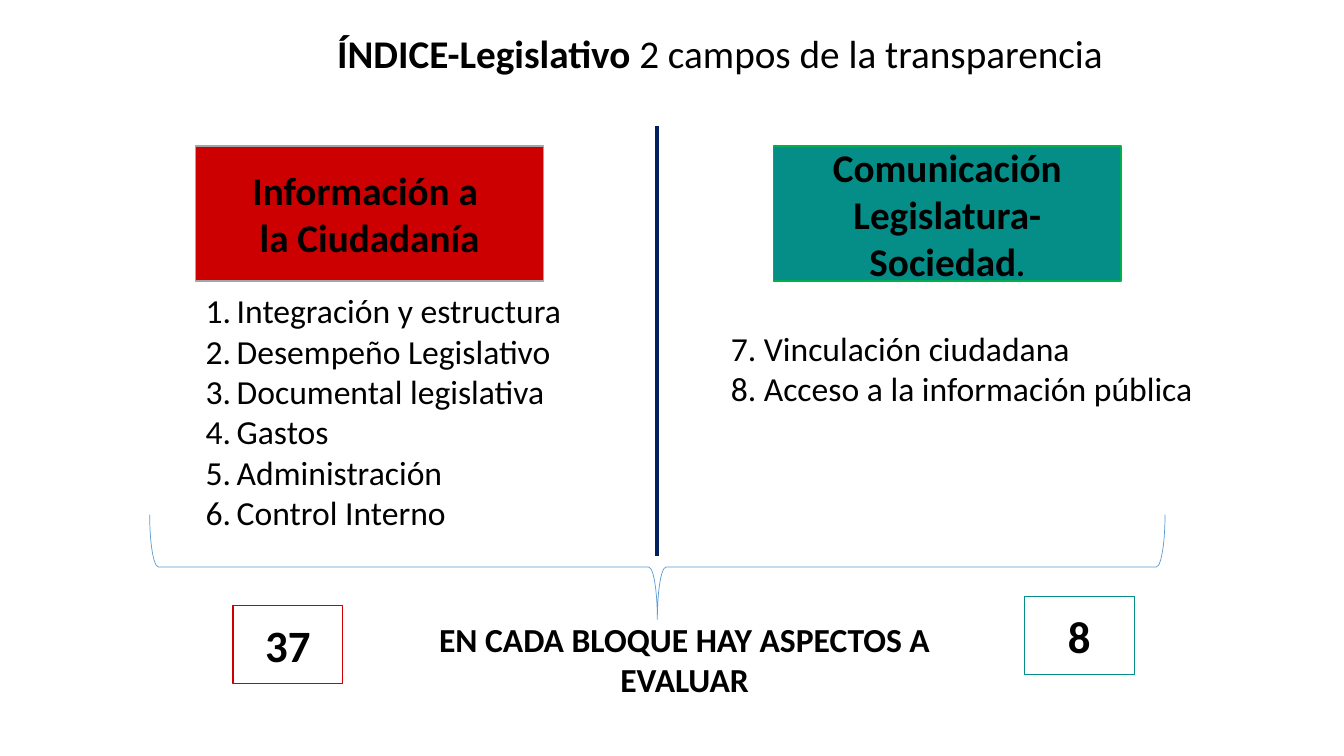
from dataclasses import dataclass

import pptx
import pptx.dml.color
import pptx.enum.shapes
import pptx.enum.text
import pptx.oxml.ns
import pptx.util
from lxml import etree

Inches = pptx.util.Inches
Pt = pptx.util.Pt
ALIGN = pptx.enum.text.PP_ALIGN
ANCHOR = pptx.enum.text.MSO_ANCHOR
SHAPE = pptx.enum.shapes.MSO_SHAPE
qn = pptx.oxml.ns.qn

COLORS = {
    "text": "000000",
    "red": "CC0000",
    "teal": "048E87",
    "gray": "A5A5A5",
    "green": "00B050",
    "navy": "002060",
    "blue": "5B9BD5",
}
HANGING = 0.31


@dataclass(frozen=True)
class Run:
    text: str
    size: float = 24
    bold: bool = False


@dataclass(frozen=True)
class Box:
    left: float
    top: float
    width: float
    height: float
    fill: str = ""
    line: str = ""
    paragraphs: tuple[tuple[Run, ...], ...] = ()


@dataclass(frozen=True)
class TextBlock:
    left: float
    top: float
    width: float
    height: float
    paragraphs: tuple[tuple[Run, ...], ...]
    align: int = ALIGN.LEFT
    anchor: int = ANCHOR.TOP
    spacing: float = 1.0
    hanging: bool = False
    numbered: bool = False


def color(name: str) -> pptx.dml.color.RGBColor:
    return pptx.dml.color.RGBColor.from_string(COLORS[name])


def place(item: Box | TextBlock) -> tuple[int, ...]:
    return tuple(Inches(v) for v in (item.left, item.top, item.width, item.height))


def set_line(line, name: str, width: float) -> None:
    line.color.rgb = color(name)
    line.width = Pt(width)


def write(frame, paragraphs, align: int, anchor: int, spacing: float = 1.0) -> None:
    frame.word_wrap = True
    frame.vertical_anchor = anchor
    for index, runs in enumerate(paragraphs):
        paragraph = frame.paragraphs[0] if index == 0 else frame.add_paragraph()
        paragraph.alignment = align
        paragraph.line_spacing = spacing
        for part in runs:
            run = paragraph.add_run()
            run.text = part.text
            run.font.color.rgb = color("text")
            font_format = {"name": "Calibri", "size": Pt(part.size), "bold": part.bold}
            for attribute, value in font_format.items():
                setattr(run.font, attribute, value)


def draw_box(slide, box: Box) -> None:
    shape = slide.shapes.add_shape(SHAPE.RECTANGLE, *place(box))
    shape.shadow.inherit = False
    if box.fill:
        shape.fill.solid()
        shape.fill.fore_color.rgb = color(box.fill)
    else:
        shape.fill.background()
    set_line(shape.line, box.line, 1)
    write(shape.text_frame, box.paragraphs, ALIGN.CENTER, ANCHOR.MIDDLE)


def draw_text(slide, block: TextBlock) -> None:
    frame = slide.shapes.add_textbox(*place(block)).text_frame
    write(frame, block.paragraphs, block.align, block.anchor, block.spacing)
    if not block.hanging:
        return
    for paragraph in frame.paragraphs:
        properties = paragraph._p.get_or_add_pPr()
        properties.set("marL", str(Inches(HANGING)))
        properties.set("indent", str(-Inches(HANGING)))
        if block.numbered:
            etree.SubElement(properties, qn("a:buAutoNum"), type="arabicPeriod")


def draw_divider(slide) -> None:
    x = Inches(6.52)
    divider = slide.shapes.add_connector(
        pptx.enum.shapes.MSO_CONNECTOR.STRAIGHT, x, Inches(1.25), x, Inches(5.52))
    set_line(divider.line, "navy", 3)
    etree.SubElement(divider._element.spPr, qn("a:effectLst"))


def draw_brace(slide) -> None:
    brace = slide.shapes.add_shape(
        SHAPE.LEFT_BRACE, Inches(6), Inches(0.59), Inches(1.04), Inches(10.07))
    brace.rotation = 270
    brace.shadow.inherit = False
    brace.fill.background()
    set_line(brace.line, "blue", 0.5)


def heading(left: float, fill: str, line: str, *paragraphs: tuple[Run, ...]) -> Box:
    return Box(left, 1.45, 3.45, 1.34, fill, line, paragraphs)


def total(left: float, top: float, line: str, number: str) -> Box:
    return Box(left, top, 1.09, 0.77, "", line, ((Run(number, 32, True),),))


def lines(*texts: str) -> tuple[tuple[Run, ...], ...]:
    return tuple((Run(text),) for text in texts)


BOXES = (
    heading(1.94, "red", "gray",
            (Run("Información a ", 28, True),), (Run("la Ciudadanía", 28, True),)),
    heading(7.67, "teal", "green",
            (Run("Comunicación", 28, True),),
            (Run("Legislatura-Sociedad", 28, True), Run(".", 24, True))),
    total(2.31, 6.01, "red", "37"),
    total(10.16, 5.92, "teal", "8"),
)

TEXTS = (
    TextBlock(2.43, 0.29, 9.42, 0.53,
              ((Run("ÍNDICE-Legislativo ", 28, True),
                Run("2 campos de la transparencia", 28)),),
              ALIGN.CENTER, ANCHOR.MIDDLE, 0.9),
    TextBlock(1.94, 2.83, 3.96, 2.76,
              lines("Integración y estructura", "Desempeño Legislativo",
                    "Documental legislativa", "Gastos", "Administración",
                    "Control Interno"),
              hanging=True, numbered=True),
    TextBlock(7.15, 3.2, 4.87, 1.31,
              lines("7. Vinculación ciudadana", "8. Acceso a la información pública"),
              hanging=True),
    TextBlock(3.71, 6.09, 6.16, 0.5,
              ((Run("EN CADA BLOQUE HAY ASPECTOS A EVALUAR", 24, True),),),
              ALIGN.CENTER),
)


def main() -> None:
    deck = pptx.Presentation()
    deck.slide_width = Inches(13.33)
    deck.slide_height = Inches(7.5)
    slide = deck.slides.add_slide(deck.slide_layouts[6])
    draw_divider(slide)
    draw_brace(slide)
    for box in BOXES:
        draw_box(slide, box)
    for block in TEXTS:
        draw_text(slide, block)
    deck.save("out.pptx")


if __name__ == "__main__":
    main()
